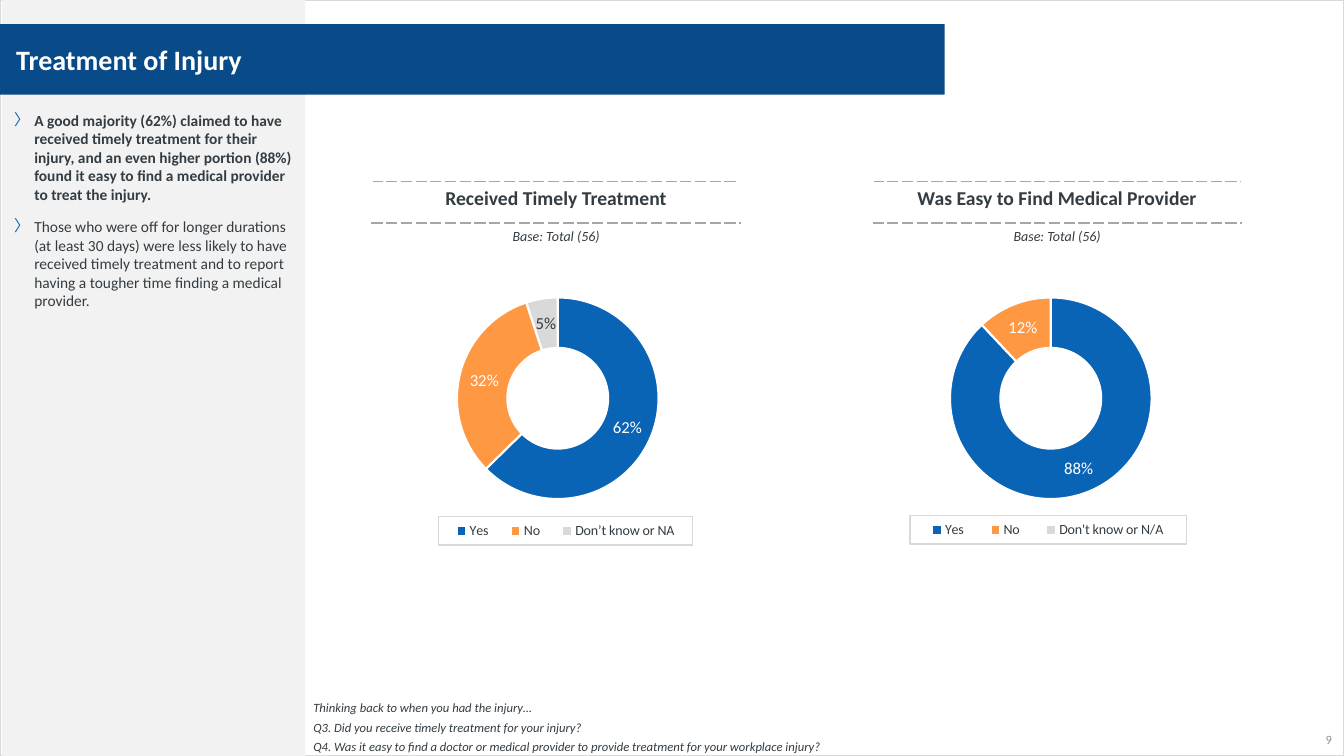
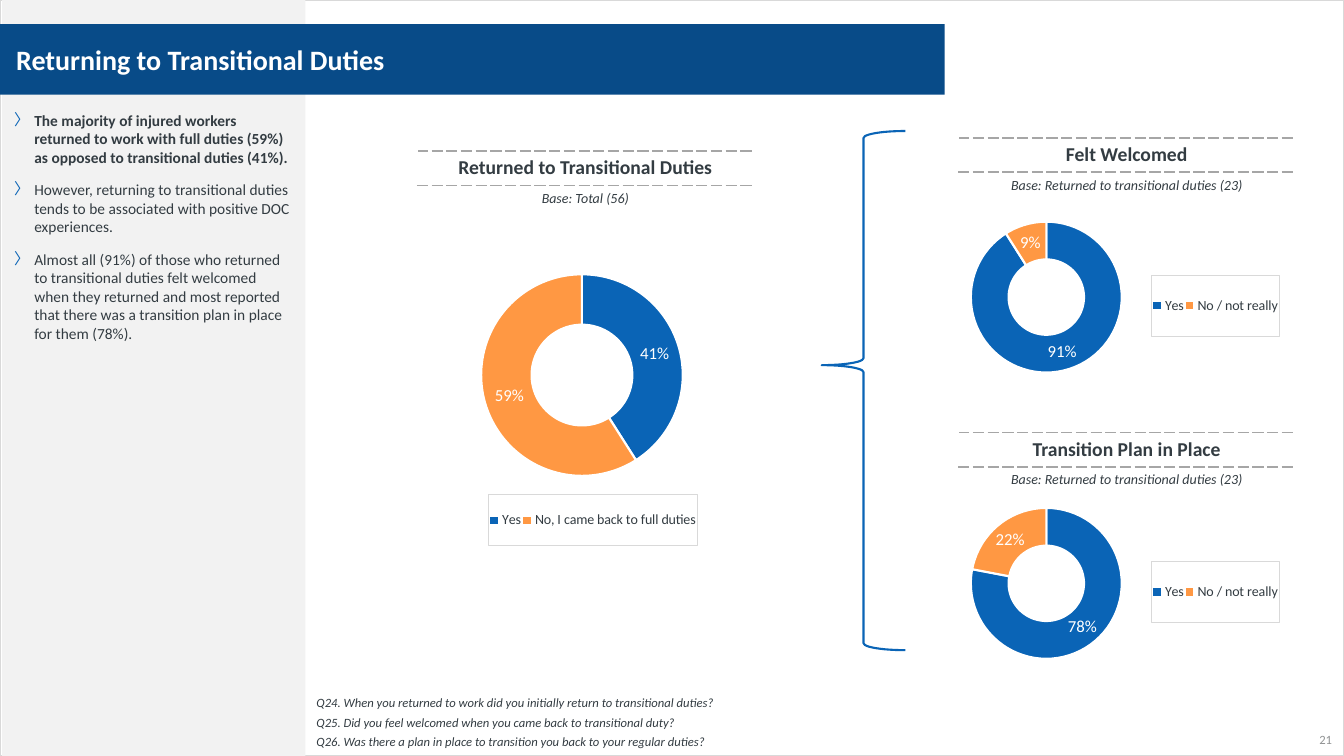
import pptx
import pptx.util
import pptx.chart.data
import pptx.dml.color
import pptx.enum.chart
import pptx.enum.shapes
import pptx.enum.text
import pptx.oxml
import pptx.oxml.ns

Inches, Pt = pptx.util.Inches, pptx.util.Pt
ALIGN, ANCHOR = pptx.enum.text.PP_ALIGN, pptx.enum.text.MSO_ANCHOR
SHAPE = pptx.enum.shapes.MSO_SHAPE
FONT = "Calibri"
INK, WHITE, GREY = "333C42", "FFFFFF", "909293"
BAND, SIDEBAR, FRAME, DASH = "084B88", "F2F2F2", "D9D9D9", "A6A6A6"
BLUE, ORANGE, PALE = "0A64B6", "FF9843", "D9D9D9"
SLICE_COLOURS = [BLUE, ORANGE, PALE]

LARGE = {"size": (5.08, 3.35), "plot": (0.335, 0.102, 0.394, 0.597)}
SMALL = {"size": (3.8, 2.8), "plot": (0.134, 0.133, 0.394, 0.597)}
SMALL_LEGEND = (0.605, 0.353, 0.334, 0.218)
WELCOME_ANSWERS = ["Yes", "No / not really"]
WELCOME_BASE = "Base: Returned to transitional duties (23)"

SLIDES = [
    {
        "title": "Treatment of Injury",
        "number": "9",
        "findings": [
            "A good majority (62%) claimed to have received timely treatment for their injury, and an even higher portion (88%) found it easy to find a medical provider to treat the injury.",
            "Those who were off for longer durations (at least 30 days) were less likely to have received timely treatment and to report having a tougher time finding a medical provider.",
        ],
        "questions": [
            "Thinking back to when you had the injury…",
            "Q3. Did you receive timely treatment for your injury?",
            "Q4. Was it easy to find a doctor or medical provider to provide treatment for your workplace injury?",
        ],
        "questions_at": (3.01, 7.48),
        "heading_size": (3.65, 0.41),
        "panels": [
            {"heading": "Received Timely Treatment", "base": "Base: Total (56)",
             "heading_at": (3.69, 1.8), "chart_at": (2.83, 2.61), "kind": LARGE,
             "legend": (0.3, 0.752, 0.496, 0.083),
             "answers": ["Yes", "No", "Don’t know or NA"], "values": [0.62, 0.32, 0.05]},
            {"heading": "Was Easy to Find Medical Provider", "base": "Base: Total (56)",
             "heading_at": (8.66, 1.8), "chart_at": (7.72, 2.61), "kind": LARGE,
             "legend": (0.257, 0.749, 0.539, 0.083),
             "answers": ["Yes", "No", "Don't know or N/A"], "values": [0.88, 0.12, 0]},
        ],
    },
    {
        "title": "Returning to Transitional Duties",
        "number": "21",
        "findings": [
            "The majority of injured workers returned to work with full duties (59%) as opposed to transitional duties (41%).",
            "However, returning to transitional duties tends to be associated with positive DOC experiences.",
            "Almost all (91%) of those who returned to transitional duties felt welcomed when they returned and most reported that there was a transition plan in place for them (78%).",
        ],
        "questions": [
            "Q24. When you returned to work did you initially return to transitional duties?",
            "Q25. Did you feel welcomed when you came back to transitional duty?",
            "Q26. Was there a plan in place to transition you back to your regular duties?",
        ],
        "questions_at": (3.04, 7.43),
        "heading_size": (3.33, 0.34),
        "panels": [
            {"heading": "Returned to Transitional Duties", "base": "Base: Total (56)",
             "heading_at": (4.14, 1.5), "chart_at": (3.07, 2.38), "kind": LARGE,
             "legend": (0.349, 0.755, 0.408, 0.151),
             "answers": ["Yes", "No, I came back to full duties"], "values": [0.41, 0.59]},
            {"heading": "Felt Welcomed", "base": WELCOME_BASE,
             "heading_at": (9.51, 1.37), "chart_at": (9.12, 1.74), "kind": SMALL,
             "legend": SMALL_LEGEND, "answers": WELCOME_ANSWERS, "values": [0.91, 0.09]},
            {"heading": "Transition Plan in Place", "base": WELCOME_BASE,
             "heading_at": (9.51, 4.29), "chart_at": (9.12, 4.58), "kind": SMALL,
             "legend": SMALL_LEGEND, "answers": WELCOME_ANSWERS, "values": [0.78, 0.22]},
        ],
        "brace": (8.15, 1.3, 0.83, 5.15),
    },
]


def colour(value):
    return pptx.dml.color.RGBColor.from_string(value)


def xml(prefix, markup):
    head, tail = markup.split(">", 1) if not markup.endswith("/>") else (markup[:-2], None)
    names = pptx.oxml.ns.nsdecls(*prefix.split())
    if tail is None:
        return pptx.oxml.parse_xml(f"{head} {names}/>")
    return pptx.oxml.parse_xml(f"{head} {names}>{tail}")


def style_font(font, size, value, bold=False, italic=False):
    font.name = FONT
    font.size = Pt(size)
    font.color.rgb = colour(value)
    font.bold = bold
    font.italic = italic


def add_run(paragraph, text, size, value, bold=False, italic=False):
    run = paragraph.add_run()
    run.text = text
    style_font(run.font, size, value, bold, italic)


def place(shape, left, top, width, height):
    shape.left, shape.top = Inches(left), Inches(top)
    shape.width, shape.height = Inches(width), Inches(height)


def set_frame(shape, anchor, insets=(0.1, 0.05, 0.1, 0.05)):
    frame = shape.text_frame
    frame.word_wrap = True
    frame.vertical_anchor = anchor
    frame.margin_left, frame.margin_top, frame.margin_right, frame.margin_bottom = map(Inches, insets)
    return frame


def paragraphs_for(frame, texts):
    for index, text in enumerate(texts):
        paragraph = frame.paragraphs[0] if index == 0 else frame.add_paragraph()
        yield index, paragraph, text


def add_preset(slide, preset, box, fill=None, line=None, width=1):
    shape = slide.shapes.add_shape(preset, *map(Inches, box))
    shape.shadow.inherit = False
    if fill:
        shape.fill.solid()
        shape.fill.fore_color.rgb = colour(fill)
    else:
        shape.fill.background()
    if line:
        shape.line.color.rgb = colour(line)
        shape.line.width = Pt(width)
    else:
        shape.line.fill.background()
    return shape


def add_sidebar(slide, findings):
    sidebar = add_preset(slide, SHAPE.RECTANGLE, (0.02, 0, 3.01, 7.5), SIDEBAR)
    frame = set_frame(sidebar, ANCHOR.TOP, (0.12, 1.1, 0.12, 0.05))
    for index, paragraph, text in paragraphs_for(frame, findings):
        properties = paragraph._p.get_or_add_pPr()
        properties.set("marL", str(Inches(0.2)))
        properties.set("indent", str(-Inches(0.2)))
        properties.append(xml("a", f'<a:buClr><a:srgbClr val="{BLUE}"/></a:buClr>'))
        properties.append(xml("a", f'<a:buFont typeface="{FONT}"/>'))
        properties.append(xml("a", '<a:buChar char="〉"/>'))
        paragraph.alignment = ALIGN.LEFT
        if index:
            paragraph.space_before = Pt(10)
        add_run(paragraph, text, 11, INK, bold=index == 0)


def add_title(slide, text):
    title = slide.shapes.title
    slide.shapes._spTree.append(title._element)
    place(title, 0, 0.24, 9.37, 0.7)
    title.fill.solid()
    title.fill.fore_color.rgb = colour(BAND)
    paragraph = set_frame(title, ANCHOR.MIDDLE, (0.16, 0.05, 0.1, 0.05)).paragraphs[0]
    paragraph.alignment = ALIGN.LEFT
    add_run(paragraph, text, 20, WHITE, bold=True)


def add_footer(slide, questions, left, bottom, number):
    box = slide.shapes.add_textbox(Inches(left), Inches(bottom - 0.64), Inches(10.07), Inches(0.64))
    frame = set_frame(box, ANCHOR.BOTTOM, (0.1, 0, 0.1, 0))
    for index, paragraph, text in paragraphs_for(frame, questions):
        paragraph.space_after = Pt(3)
        add_run(paragraph, text, 9, INK, italic=True)
    page = slide.shapes.add_textbox(Inches(12.92), Inches(7.21), Inches(0.39), Inches(0.26))
    paragraph = set_frame(page, ANCHOR.MIDDLE).paragraphs[0]
    paragraph.alignment = ALIGN.RIGHT
    add_run(paragraph, number, 9, GREY)


def add_dashes(cell, sides):
    properties = cell._tc.get_or_add_tcPr()
    for index, side in enumerate(sides):
        properties.insert(index, xml("a", (
            f'<a:ln{side} w="{Pt(1.5)}"><a:solidFill><a:srgbClr val="{DASH}"/></a:solidFill>'
            f'<a:prstDash val="sysDash"/></a:ln{side}>')))


def add_heading(slide, panel, width, title_height):
    left, top = panel["heading_at"]
    base_height = 0.41
    table = slide.shapes.add_table(
        2, 1, Inches(left), Inches(top), Inches(width), Inches(title_height + base_height)).table
    table.first_row = False
    table.horz_banding = False
    rows = [
        (panel["heading"], title_height, 14, True, "TB"),
        (panel["base"], base_height, 10, False, "T"),
    ]
    for index, (text, height, size, bold, sides) in enumerate(rows):
        table.rows[index].height = Inches(height)
        cell = table.cell(index, 0)
        cell.fill.background()
        add_dashes(cell, sides)
        paragraph = cell.text_frame.paragraphs[0]
        paragraph.alignment = ALIGN.CENTER
        add_run(paragraph, text, size, INK, bold=bold, italic=not bold)


def manual_layout(box, inner=False):
    target = '<c:layoutTarget val="inner"/>' if inner else ""
    modes = "".join(f'<c:{axis}Mode val="edge"/>' for axis in "xy")
    sizes = "".join(f'<c:{axis} val="{value}"/>' for axis, value in zip("xywh", box))
    return xml("c", f"<c:layout><c:manualLayout>{target}{modes}{sizes}</c:manualLayout></c:layout>")


def remove_layout(element):
    for layout in element.findall(pptx.oxml.ns.qn("c:layout")):
        element.remove(layout)


def format_legend(chart, box):
    chart.has_legend = True
    legend = chart.legend
    legend.position = pptx.enum.chart.XL_LEGEND_POSITION.BOTTOM
    legend.include_in_layout = False
    style_font(legend.font, 10, INK)
    element = legend._element
    remove_layout(element)
    element.find(pptx.oxml.ns.qn("c:legendPos")).addnext(manual_layout(box))
    element.find(pptx.oxml.ns.qn("c:overlay")).addnext(xml("c a", (
        f'<c:spPr><a:noFill/><a:ln w="{Pt(0.75)}"><a:solidFill><a:srgbClr val="{FRAME}"/>'
        '</a:solidFill></a:ln></c:spPr>')))


def add_doughnut(slide, panel):
    number_format = "0%;;"
    data = pptx.chart.data.CategoryChartData(number_format=number_format)
    data.categories = panel["answers"]
    data.add_series("Series 1", panel["values"])
    box = panel["chart_at"] + panel["kind"]["size"]
    chart = slide.shapes.add_chart(
        pptx.enum.chart.XL_CHART_TYPE.DOUGHNUT, *map(Inches, box), data).chart
    chart.has_title = False
    style_font(chart.font, 10, INK)
    format_legend(chart, panel["legend"])
    area = chart._chartSpace.chart.plotArea
    remove_layout(area)
    area.insert(0, manual_layout(panel["kind"]["plot"], inner=True))
    plot = chart.plots[0]
    plot.vary_by_categories = True
    series = plot.series[0]
    labels = series.data_labels
    labels.show_value = True
    labels.show_percentage = False
    labels.number_format = number_format
    labels.number_format_is_linked = False
    style_font(labels.font, 12, WHITE)
    for index, value in enumerate(panel["values"]):
        point = series.points[index]
        point.format.fill.solid()
        point.format.fill.fore_color.rgb = colour(SLICE_COLOURS[index])
        point.format.line.color.rgb = colour(WHITE)
        point.format.line.width = Pt(1.5)
        if SLICE_COLOURS[index] == PALE and value:
            style_font(point.data_label.font, 12, INK)


def build_slide(presentation, content):
    slide = presentation.slides.add_slide(presentation.slide_layouts[5])
    add_preset(slide, SHAPE.RECTANGLE, (0, 0, 13.33, 7.5), line=FRAME)
    add_sidebar(slide, content["findings"])
    add_title(slide, content["title"])
    add_footer(slide, content["questions"], *content["questions_at"], content["number"])
    for panel in content["panels"]:
        add_doughnut(slide, panel)
        add_heading(slide, panel, *content["heading_size"])
    if "brace" in content:
        brace = add_preset(slide, SHAPE.LEFT_BRACE, content["brace"], line=BLUE, width=1.5)
        brace.adjustments[0] = 0.083
        brace.adjustments[1] = 0.451


def main():
    presentation = pptx.Presentation()
    presentation.slide_width = Inches(13.33)
    presentation.slide_height = Inches(7.5)
    for content in SLIDES:
        build_slide(presentation, content)
    presentation.save("out.pptx")


if __name__ == "__main__":
    main()
